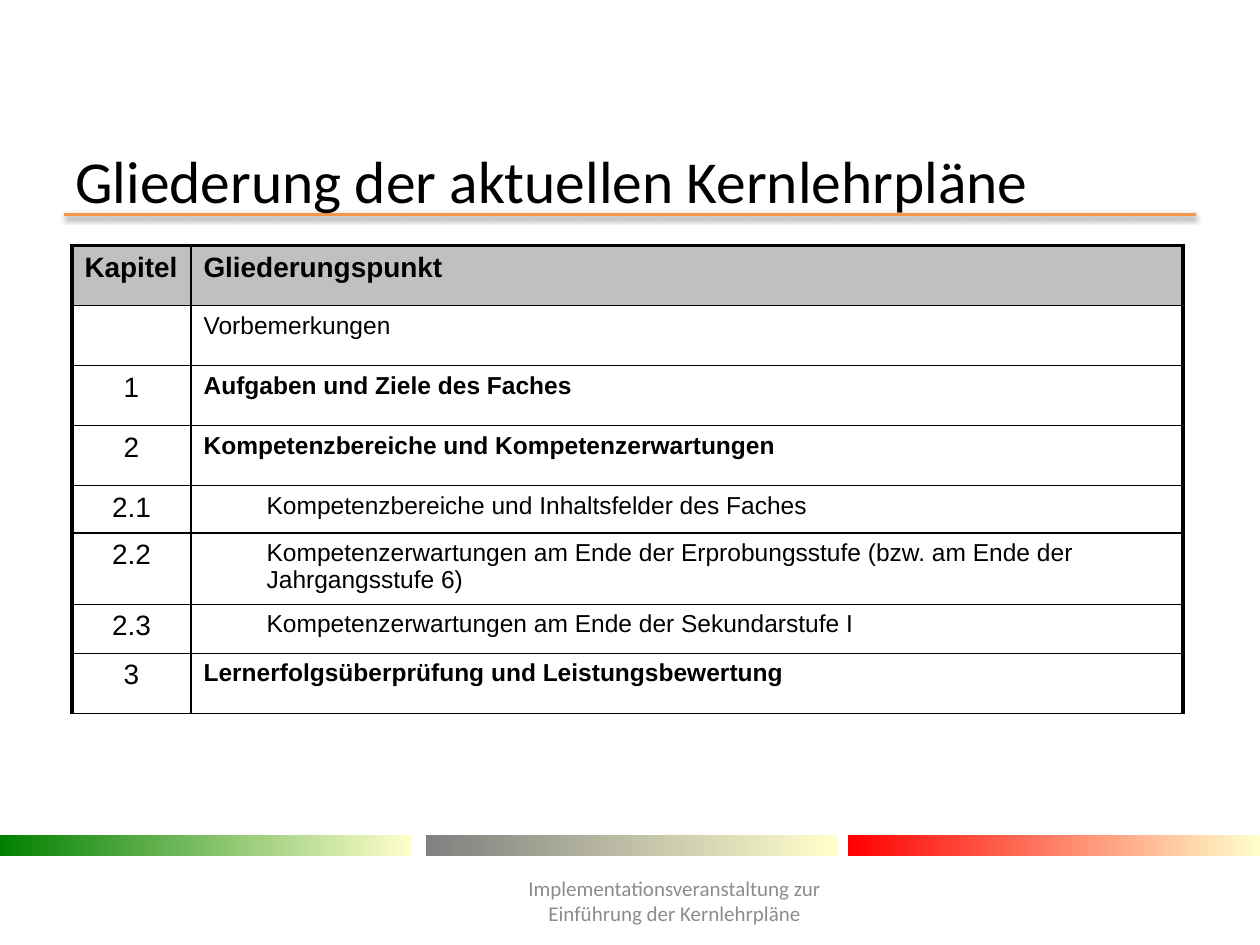
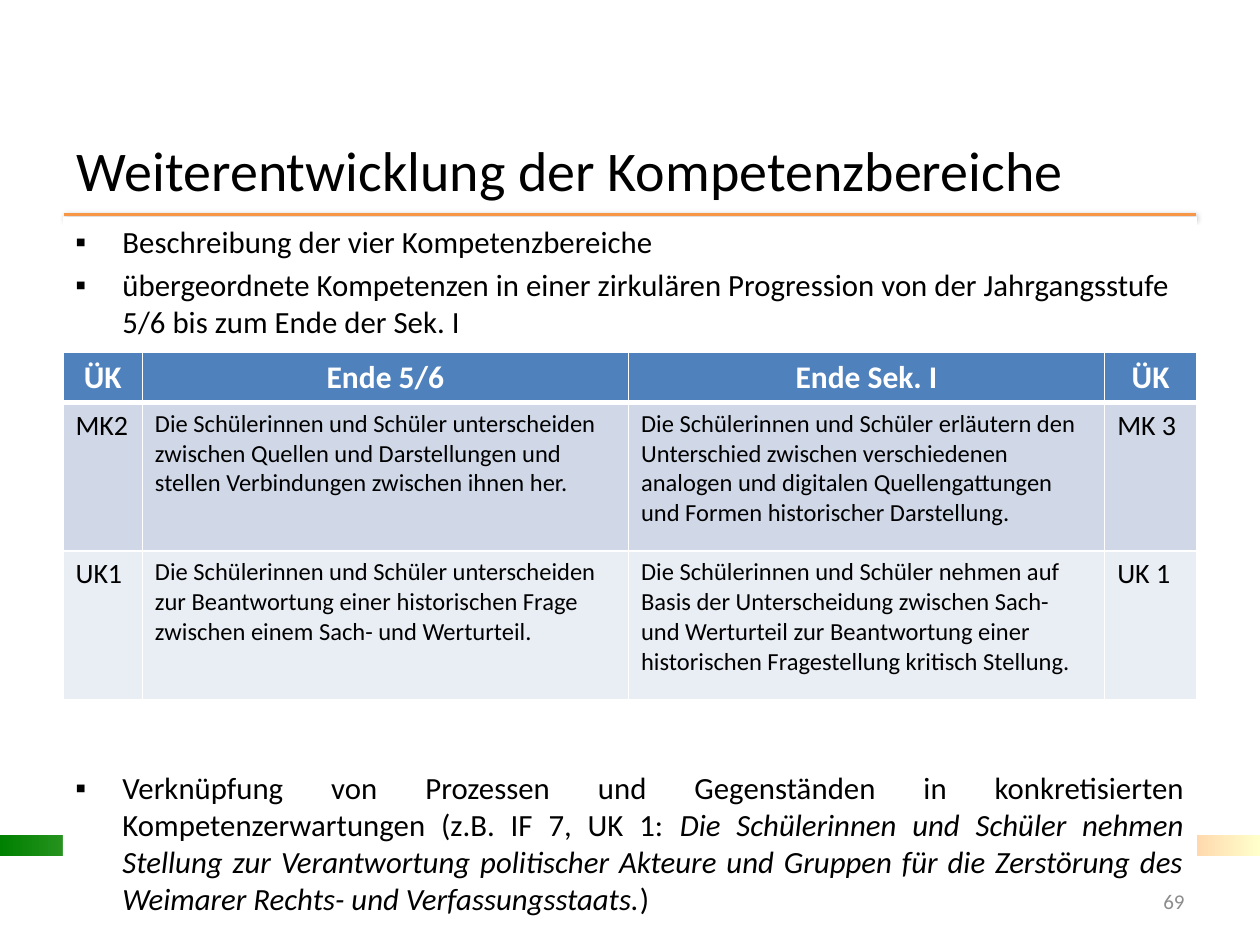
from lxml import etree
from pptx import Presentation
from pptx.dml.color import RGBColor
from pptx.enum.shapes import MSO_CONNECTOR, MSO_SHAPE
from pptx.enum.text import MSO_ANCHOR, PP_ALIGN
from pptx.oxml import parse_xml
from pptx.oxml.ns import nsdecls, qn
from pptx.util import Cm, Pt

LEFT, CENTER, RIGHT, JUSTIFY = PP_ALIGN.LEFT, PP_ALIGN.CENTER, PP_ALIGN.RIGHT, PP_ALIGN.JUSTIFY
TOP, MIDDLE = MSO_ANCHOR.TOP, MSO_ANCHOR.MIDDLE
RECTANGLE, STRAIGHT = MSO_SHAPE.RECTANGLE, MSO_CONNECTOR.STRAIGHT

COLORS = {
    "black": "000000", "white": "FFFFFF", "footer": "8C8C8C", "rule": "F79646",
    "green": "008000", "gray": "808080", "red": "FF0000", "cream": "FFFFCC",
    "outline_head": "C0C0C0", "blue_head": "4F81BD",
    "blue_row": "D0D8E8", "pale_row": "E9EDF4",
}
BODY_SIZE = 17.6


def write_text(text_frame, text, size, color="black", font="Calibri", bold=False,
               align=LEFT, anchor=TOP):
    text_frame.text = text
    text_frame.word_wrap = True
    text_frame.vertical_anchor = anchor
    for paragraph in text_frame.paragraphs:
        paragraph.alignment = align
        for run in paragraph.runs:
            run.font.size = Pt(size)
            run.font.name = font
            run.font.bold = bold
            run.font.color.rgb = RGBColor.from_string(COLORS[color])


def style_cell(cell, fill, border_color, widths):
    """Set the fill and the left, right, top and bottom border widths in points."""
    if fill:
        cell.fill.solid()
        cell.fill.fore_color.rgb = RGBColor.from_string(COLORS[fill])
    else:
        cell.fill.background()
    properties = cell._tc.get_or_add_tcPr()
    for position, (side, width) in enumerate(zip("LRTB", widths)):
        properties.insert(position, parse_xml(
            f'<a:ln{side} {nsdecls("a")} w="{Pt(width)}"><a:solidFill>'
            f'<a:srgbClr val="{COLORS[border_color]}"/></a:solidFill></a:ln{side}>'))


presentation = Presentation()
presentation.slide_width, presentation.slide_height = Cm(25.4), Cm(19.05)
blank_layout = presentation.slide_layouts[6]

# Shared frame: rule, colour bands, title and footer text
band_left = {"green": 0, "gray": 8.59, "red": 17.09}
frames = [
    {"title": "Gliederung der aktuellen Kernlehrpläne", "title_size": 34,
     "title_box": (1.27, 3.12, 22.86, 1), "bands": ["green", "gray", "red"],
     "footer": "Implementationsveranstaltung zur Einführung der Kernlehrpläne",
     "footer_box": (9.5, 17.65, 8.2, 1.02), "footer_align": CENTER},
    {"title": "Weiterentwicklung der Kompetenzbereiche", "title_size": 32,
     "title_box": (1.3, 2.51, 22.86, 1.8), "bands": ["green", "red"],
     "footer": "69",
     "footer_box": (22.5, 17.65, 1.63, 1.02), "footer_align": RIGHT},
]
slides = []
for frame in frames:
    slide = presentation.slides.add_slide(blank_layout)
    slides.append(slide)

    rule = slide.shapes.add_connector(STRAIGHT, Cm(1.3), Cm(4.32), Cm(24.1), Cm(4.32))
    rule.line.width = Pt(2)
    rule.line.color.rgb = RGBColor.from_string(COLORS["rule"])
    effects = etree.SubElement(rule._element.spPr, qn("a:effectLst"))
    shadow = etree.SubElement(effects, qn("a:outerShdw"), blurRad="40000", dist="20000",
                              dir="5400000", rotWithShape="0")
    shadow_color = etree.SubElement(shadow, qn("a:srgbClr"), val=COLORS["black"])
    etree.SubElement(shadow_color, qn("a:alpha"), val="38000")

    for name in frame["bands"]:
        band = slide.shapes.add_shape(RECTANGLE, Cm(band_left[name]), Cm(16.84),
                                      Cm(8.31), Cm(0.41))
        band.shadow.inherit = False
        band.line.fill.background()
        band.fill.gradient()
        band.fill.gradient_angle = 0
        for stop, color in zip(band.fill.gradient_stops, (name, "cream")):
            stop.color.rgb = RGBColor.from_string(COLORS[color])

    title = slide.shapes.add_textbox(*map(Cm, frame["title_box"]))
    write_text(title.text_frame, frame["title"], frame["title_size"], anchor=MIDDLE)

outline_slide, progress_slide = slides

# Slide 1: outline of the curricula
outline_rows = [
    # chapter, heading, row height, bold, indented
    ("Kapitel", "Gliederungspunkt", 1.21, True, False),
    ("", "Vorbemerkungen", 1.21, False, False),
    ("1", "Aufgaben und Ziele des Faches", 1.21, True, False),
    ("2", "Kompetenzbereiche und Kompetenzerwartungen", 1.21, True, False),
    ("2.1", "Kompetenzbereiche und Inhaltsfelder des Faches", 0.95, False, True),
    ("2.2", "Kompetenzerwartungen am Ende der Erprobungsstufe "
            "(bzw. am Ende der Jahrgangsstufe 6)", 1.37, False, True),
    ("2.3", "Kompetenzerwartungen am Ende der Sekundarstufe I", 0.99, False, True),
    ("3", "Lernerfolgsüberprüfung und Leistungsbewertung", 1.21, True, False),
]
outline = outline_slide.shapes.add_table(len(outline_rows), 2, Cm(1.45), Cm(4.95),
                                         Cm(22.4), Cm(9.36)).table
outline.first_row = outline.horz_banding = False
outline.columns[0].width, outline.columns[1].width = Cm(2.4), Cm(20)
for index, (chapter, heading, height, bold, indented) in enumerate(outline_rows):
    outline.rows[index].height = Cm(height)
    is_head = index == 0
    fill = "outline_head" if is_head else None
    top_width = 2.25 if is_head else 1
    chapter_cell, heading_cell = outline.rows[index].cells
    write_text(chapter_cell.text_frame, chapter, 16, font="Arial", bold=is_head,
               align=LEFT if is_head else CENTER)
    write_text(heading_cell.text_frame, heading, 16 if is_head else 14, font="Arial", bold=bold)
    if indented:
        heading_cell.text_frame.paragraphs[0]._p.get_or_add_pPr().set("marL", str(Cm(1.27)))
    style_cell(chapter_cell, fill, "black", (2.25, 1, top_width, 1))
    style_cell(heading_cell, fill, "black", (1, 2.25, top_width, 1))

# Slide 2: white body panel and the closing bullet below the table
panel = progress_slide.shapes.add_shape(RECTANGLE, Cm(1.27), Cm(4.37), Cm(22.86), Cm(14.3))
panel.shadow.inherit = False
panel.fill.solid()
panel.fill.fore_color.rgb = RGBColor.from_string(COLORS["white"])
panel.line.fill.background()
write_text(panel.text_frame,
           "Beschreibung der vier Kompetenzbereiche\n"
           "übergeordnete Kompetenzen in einer zirkulären Progression von der "
           "Jahrgangsstufe 5/6 bis zum Ende der Sek. I", BODY_SIZE)

closing = progress_slide.shapes.add_textbox(Cm(1.27), Cm(15.38), Cm(22.86), Cm(3.29))
write_text(closing.text_frame,
           "Verknüpfung von Prozessen und Gegenständen in konkretisierten "
           "Kompetenzerwartungen (z.B. IF 7, UK 1: ", BODY_SIZE, align=JUSTIFY)
closing_paragraph = closing.text_frame.paragraphs[0]
for text, italic in [
    ("Die Schülerinnen und Schüler nehmen Stellung zur Verantwortung politischer Akteure "
     "und Gruppen für die Zerstörung des Weimarer Rechts- und Verfassungsstaats.", True),
    (")", False),
]:
    run = closing_paragraph.add_run()
    run.text = text
    run.font.size = Pt(BODY_SIZE)
    run.font.name = "Calibri"
    run.font.italic = italic
    run.font.color.rgb = RGBColor.from_string(COLORS["black"])

for paragraph in [*panel.text_frame.paragraphs, closing_paragraph]:
    properties = paragraph._p.get_or_add_pPr()
    properties.set("marL", str(Cm(0.95)))
    properties.set("indent", str(-Cm(0.95)))
    etree.SubElement(properties, qn("a:buFont"), typeface="Arial")
    etree.SubElement(properties, qn("a:buChar"), char="▪")
panel.text_frame.paragraphs[1].space_before = Pt(3.5)

# Slide 2: comparison of the competences
progress_rows = [
    ("ÜK", "Ende 5/6", "Ende Sek. I", "ÜK"),
    ("MK2",
     "Die Schülerinnen und Schüler unterscheiden zwischen Quellen und Darstellungen "
     "und stellen Verbindungen zwischen ihnen her.",
     "Die Schülerinnen und Schüler erläutern den Unterschied zwischen verschiedenen "
     "analogen und digitalen Quellengattungen und Formen historischer Darstellung.",
     "MK 3"),
    ("UK1",
     "Die Schülerinnen und Schüler unterscheiden zur Beantwortung einer historischen "
     "Frage zwischen einem Sach- und Werturteil.",
     "Die Schülerinnen und Schüler nehmen auf Basis der Unterscheidung zwischen Sach- "
     "und Werturteil zur Beantwortung einer historischen Fragestellung kritisch Stellung.",
     "UK 1"),
]
row_styles = [("blue_head", 1), ("blue_row", 2.99), ("pale_row", 2.99)]
progress = progress_slide.shapes.add_table(3, 4, Cm(1.27), Cm(7.1), Cm(22.85), Cm(6.98)).table
for column, width in zip(progress.columns, (1.6, 9.8, 9.6, 1.85)):
    column.width = Cm(width)
for row_index, (texts, (fill, height)) in enumerate(zip(progress_rows, row_styles)):
    progress.rows[row_index].height = Cm(height)
    is_head = row_index == 0
    for column_index, text in enumerate(texts):
        cell = progress.cell(row_index, column_index)
        if is_head:
            write_text(cell.text_frame, text, 18, "white", bold=True, align=CENTER)
        else:
            write_text(cell.text_frame, text, 16 if column_index in (0, 3) else 14)
        top_width = 3 if row_index == 1 else 1
        style_cell(cell, fill, "white", (1, 1, top_width, 3 if is_head else 1))

# Footer text on top of everything else
for slide, frame in zip(slides, frames):
    footer = slide.shapes.add_textbox(*map(Cm, frame["footer_box"]))
    write_text(footer.text_frame, frame["footer"], 12, "footer",
               align=frame["footer_align"], anchor=MIDDLE)

presentation.save("out.pptx")
